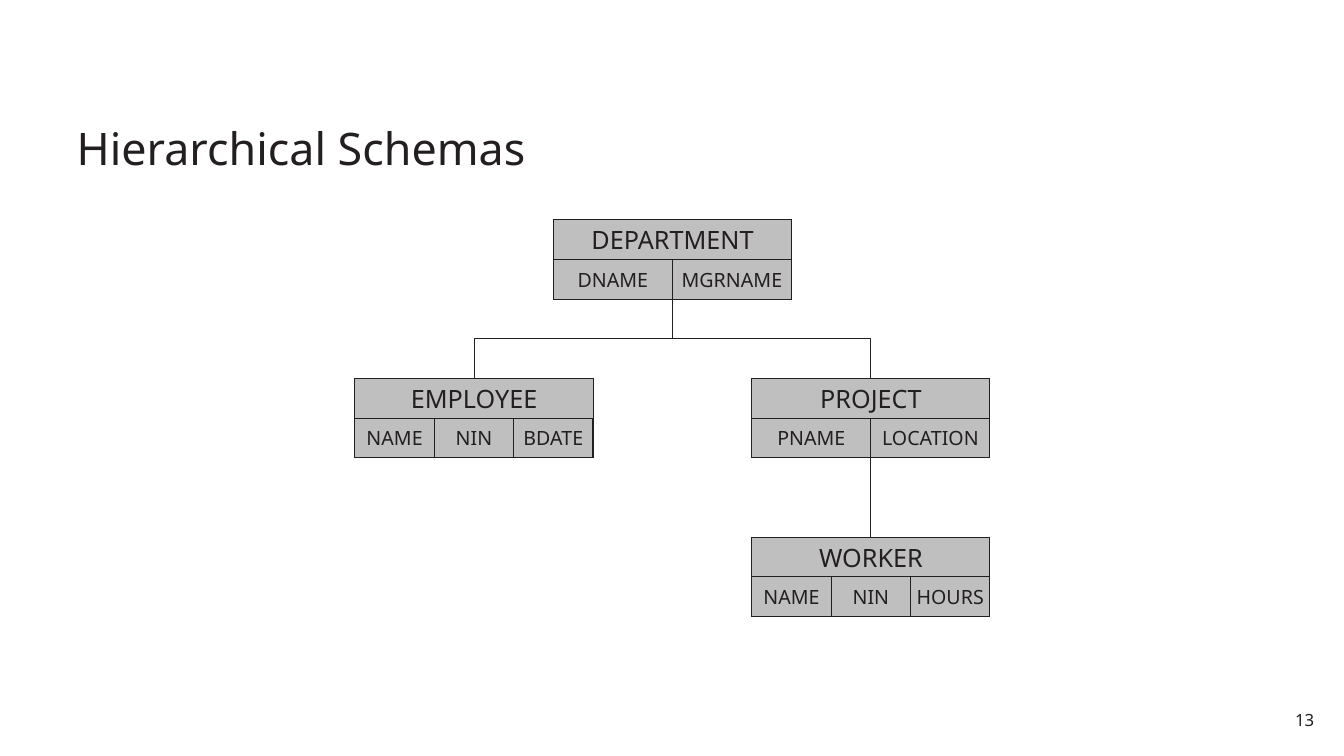
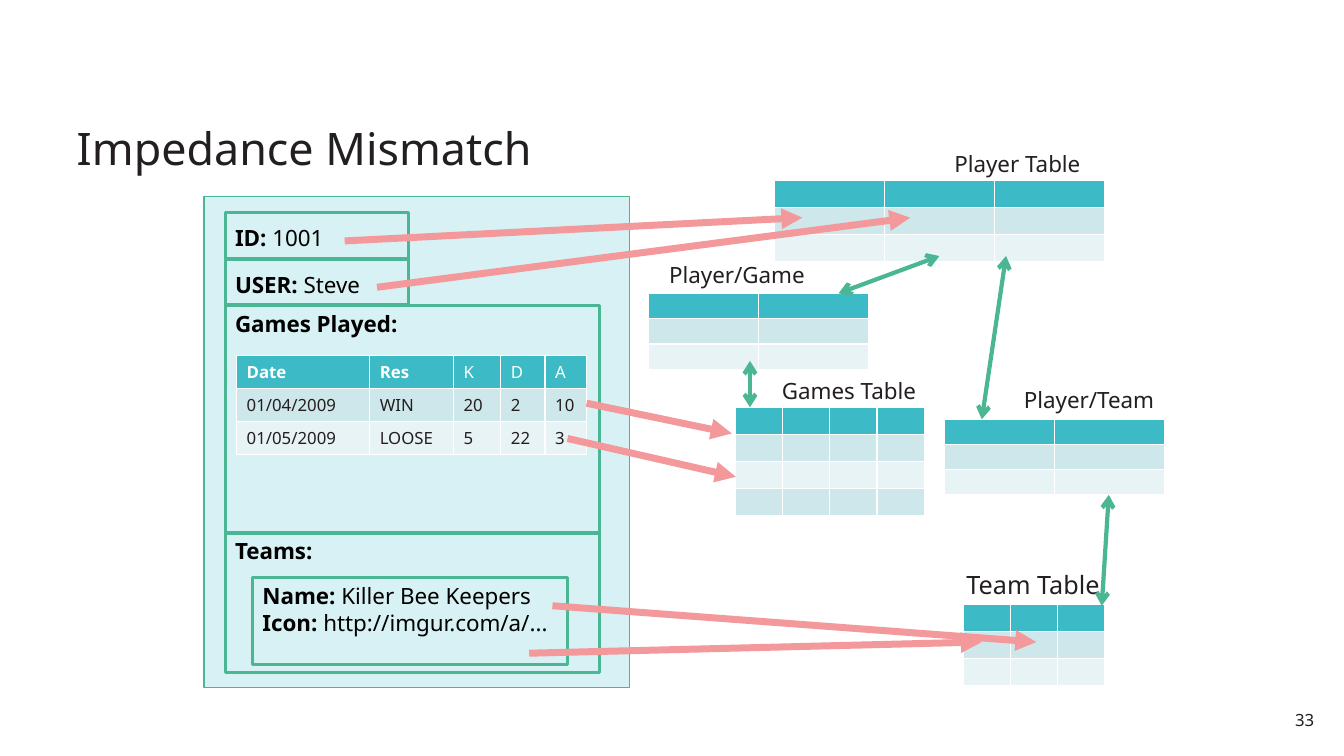
"""Build two database slides: hierarchical schemas and impedance mismatch."""
from lxml import etree
from pptx import Presentation
from pptx.dml.color import RGBColor
from pptx.enum.shapes import MSO_CONNECTOR, MSO_SHAPE
from pptx.enum.text import MSO_ANCHOR, PP_ALIGN
from pptx.oxml.ns import qn
from pptx.util import Pt

RECT = MSO_SHAPE.RECTANGLE
STRAIGHT, ELBOW = MSO_CONNECTOR.STRAIGHT, MSO_CONNECTOR.ELBOW
TOP, MIDDLE, BOTTOM = MSO_ANCHOR.TOP, MSO_ANCHOR.MIDDLE, MSO_ANCHOR.BOTTOM
LEFT, CENTER, RIGHT = PP_ALIGN.LEFT, PP_ALIGN.CENTER, PP_ALIGN.RIGHT

FONT = "Noto Sans"
INK, BLACK, WHITE, GREY = "231F20", "000000", "FFFFFF", "BFBFBF"
GREEN, PINK, PALE, TEAL = "4BB693", "F3989B", "D8F1F4", "3CBAC6"
BANDS = ["CEE7EA", "E8F3F5"]
rgb = RGBColor.from_string

TITLE = {"vertical_anchor": BOTTOM, "margin_left": Pt(5.8), "margin_right": Pt(5.8),
         "margin_top": Pt(2.9), "margin_bottom": Pt(2.9)}
NUMBER = {"margin_left": Pt(5.8), "margin_right": Pt(5.8),
          "margin_top": Pt(4.3), "margin_bottom": Pt(4.3)}
CELL = {"vertical_anchor": MIDDLE, "word_wrap": False}


def add_box(s, place, paragraphs=(), size=16, color=INK, line=None, width=0.75,
            fill=None, align=LEFT, spacing=None, frame=None):
    place = [Pt(v) for v in place]
    if line:
        sp = s.shapes.add_shape(RECT, *place)
        sp.shadow.inherit = False
        sp.line.color.rgb, sp.line.width = rgb(line), Pt(width)
        if fill:
            sp.fill.solid()
            sp.fill.fore_color.rgb = rgb(fill)
        else:
            sp.fill.background()
    else:
        sp = s.shapes.add_textbox(*place)
    tf = sp.text_frame
    for name, value in {"word_wrap": True, "vertical_anchor": TOP, **(frame or {})}.items():
        setattr(tf, name, value)
    for i, runs in enumerate(paragraphs):
        p = tf.add_paragraph() if i else tf.paragraphs[0]
        p.alignment, p.line_spacing = align, spacing
        for text, bold in runs:
            r = p.add_run()
            r.text = text
            r.font.name, r.font.size, r.font.bold = FONT, Pt(size), bold
            r.font.color.rgb = rgb(color)
    return sp


def add_line(s, ends, color, width, kind=STRAIGHT, head=None, tail=None):
    c = s.shapes.add_connector(kind, *[Pt(v) for v in ends])
    c.line.color.rgb, c.line.width = rgb(color), Pt(width)
    ln = c.element.spPr.find(qn("a:ln"))
    for tag, arrow in (("a:headEnd", head), ("a:tailEnd", tail)):
        if arrow:
            etree.SubElement(ln, qn(tag), type=arrow)
    etree.SubElement(c.element.spPr, qn("a:effectLst"))
    return c


prs = Presentation()
prs.slide_width, prs.slide_height = Pt(960), Pt(540)

slides = []
for title, number in (("Hierarchical Schemas", "13"), ("Impedance Mismatch", "33")):
    s = prs.slides.add_slide(prs.slide_layouts[6])
    add_box(s, (49, 54.7, 861.8, 73.4), [[(title, False)]], 32, spacing=0.9, frame=TITLE)
    add_box(s, (910.8, 502.6, 33.8, 22.3), [[(number, False)]], 12, align=RIGHT, frame=NUMBER)
    slides.append(s)

s = slides[0]
UNIT = 28.35
WIDTH = 6 * UNIT
MID, ROOT_TOP = 480.35, 157
records = [
    ("DEPARTMENT", 0, 0, ["DNAME", "MGRNAME"]),
    ("EMPLOYEE", -5, 4, ["NAME", "NIN", "BDATE"]),
    ("PROJECT", 5, 4, ["PNAME", "LOCATION"]),
    ("WORKER", 5, 8, ["NAME", "NIN", "HOURS"]),
]
outlines = {}
for record, dx, dy, fields in records:
    x, y = MID + dx * UNIT - WIDTH / 2, ROOT_TOP + dy * UNIT
    for row, (names, size) in enumerate((([record], 18), (fields, 14))):
        w = WIDTH / len(names)
        for col, name in enumerate(names):
            add_box(s, (x + col * w, y + row * UNIT, w, UNIT), [[(name, False)]], size,
                    line=INK, fill=GREY, align=CENTER, frame=CELL)
    outlines[record] = add_box(s, (x, y, WIDTH, 2 * UNIT), line=INK)

for side in (-1, 1):
    x, y = MID + side * 2.5 * UNIT, ROOT_TOP + 3 * UNIT
    c = add_line(s, (x + side * UNIT, y - 2.5 * UNIT, x - side * UNIT, y + 2.5 * UNIT),
                 INK, 0.75, ELBOW)
    c.element.spPr.find(qn("a:xfrm")).set("rot", str((180 + side * 90) * 60000))
c = add_line(s, (0, 0, 0, 0), INK, 0.75)
c.begin_connect(outlines["PROJECT"], 2)
c.end_connect(outlines["WORKER"], 0)

s = slides[1]
add_box(s, (145.6, 140.4, 303.9, 350.6), line=GREEN, width=1, fill=PALE)
boxes = [
    ((160.8, 152, 131, 32.6), MIDDLE, [[("ID: ", True), ("1001", False)]]),
    ((160.8, 185.2, 131, 32.6), MIDDLE, [[("USER:", True), (" Steve", False)]]),
    ((160.8, 218.2, 267.6, 163.1), TOP, [[("Games Played:", True)]]),
    ((160.8, 380.4, 267.6, 100), TOP, [[("Teams:", True)]]),
    ((180.4, 412.4, 225, 62.6), TOP, [[("Name: ", True), ("Killer Bee Keepers", False)],
                                      [("Icon:", True), (" http://imgur.com/a/...", False)]]),
]
for place, anchor, paragraphs in boxes:
    add_box(s, place, paragraphs, color=BLACK, line=GREEN, width=2.25,
            frame={"vertical_anchor": anchor, "margin_bottom": 0})

games = [["Date", "Res", "K", "D", "A"],
         ["01/04/2009", "WIN", "20", "2", "10"],
         ["01/05/2009", "LOOSE", "5", "22", "3"]]
tables = [
    (169, 254.2, [95.1, 59.9, 33.8, 31.6, 29.7], 23.55, games),
    (553.2, 129.1, [78.7] * 3, 19.3, [[""] * 3] * 3),
    (525.4, 291.2, [33.7] * 4, 19.3, [[""] * 4] * 4),
    (687.9, 432, [33.7] * 3, 19.3, [[""] * 3] * 3),
    (463.2, 209.7, [78.7] * 2, 18, [[""] * 2] * 3),
    (674.8, 299.4, [78.7] * 2, 18, [[""] * 2] * 3),
]
for x, y, widths, height, rows in tables:
    table = s.shapes.add_table(len(rows), len(widths), Pt(x), Pt(y), Pt(sum(widths)),
                               Pt(height * len(rows))).table
    for column, w in zip(table.columns, widths):
        column.width = Pt(w)
    for i, texts in enumerate(rows):
        table.rows[i].height = Pt(height)
        for j, text in enumerate(texts):
            cell = table.cell(i, j)
            tcPr = cell._tc.get_or_add_tcPr()
            for tag in ("a:lnL", "a:lnR", "a:lnT", "a:lnB"):
                ln = etree.SubElement(tcPr, qn(tag), w=str(Pt(1)))
                fill = etree.SubElement(ln, qn("a:solidFill"))
                etree.SubElement(fill, qn("a:srgbClr"), val=WHITE)
            cell.fill.solid()
            cell.fill.fore_color.rgb = rgb(BANDS[(i - 1) % 2] if i else TEAL)
            p = cell.text_frame.paragraphs[0]
            if text:
                r = p.add_run()
                r.text = text
                r.font.name, r.font.size = FONT, Pt(12)
                r.font.bold = i == 0 and j < 2
                r.font.color.rgb = rgb(INK if i else WHITE)
            else:
                etree.SubElement(p._p, qn("a:endParaRPr"), sz="600")

mappings = [
    (246.2, 172.1, 573.1, 155.5), (269.3, 205.2, 650.2, 155.5),
    (419, 288, 522.7, 309.6), (405.4, 313.2, 525.6, 340.6),
    (394.6, 432.7, 740.2, 458.6), (378, 466.6, 701.3, 458.6),
]
for ends in mappings:
    add_line(s, ends, PINK, 5, tail="triangle")

labels = [
    ("Games Table", 551.5, 265.7, 116, 16), ("Player Table", 674.6, 103.7, 109.4, 16),
    ("Team Table", 683.3, 403.2, 117.4, 18), ("Player/Game", 470.9, 182.9, 113.8, 16),
    ("Player/Team", 724.3, 272.2, 112.3, 16),
]
for text, x, y, w, size in labels:
    add_box(s, (x, y, w, 26.6), [[(text, False)]], size)

relations = [
    (599, 209.5, 671, 182.9), (535.7, 257.8, 535.7, 290.9),
    (701.3, 299.5, 718.6, 182.9), (792, 353.5, 787, 432.7),
]
for ends in relations:
    add_line(s, ends, GREEN, 3, head="arrow", tail="arrow")

prs.save("out.pptx")
